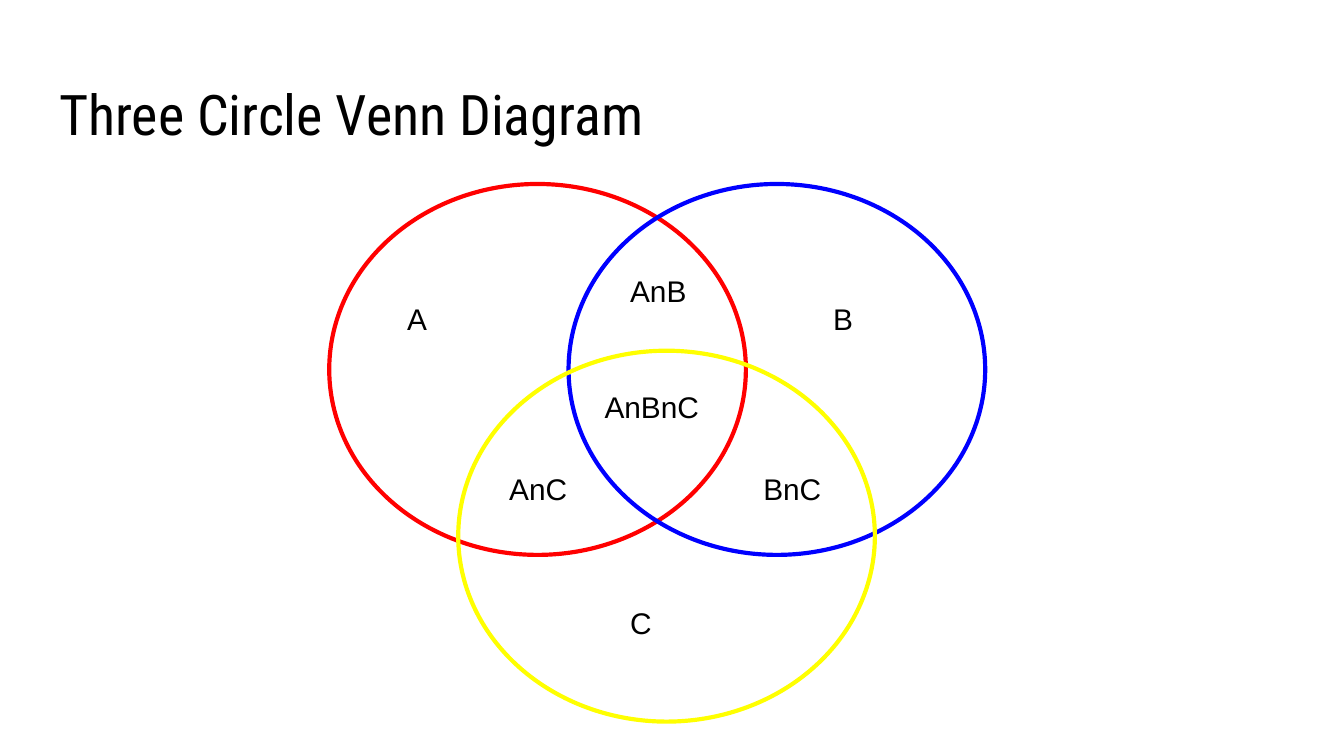
from pptx import Presentation
from pptx.dml.color import RGBColor
from pptx.enum.shapes import MSO_SHAPE
from pptx.enum.text import MSO_ANCHOR, MSO_AUTO_SIZE, PP_ALIGN
from pptx.util import Pt

COLORS = {"text": "000000", "A": "FF0000", "B": "0000FF", "C": "FFFF00"}
CIRCLE_WIDTH, CIRCLE_HEIGHT = 223.2, 198.7
SINGLE_WIDTH, OVERLAP_WIDTH, LABEL_HEIGHT = 43.2, 71.3, 35.3


class VennSlide:
    """Draws the title, circles and labels of a Venn diagram slide."""

    def __init__(self, slide):
        self.slide = slide

    def set_words(self, frame, words, font, size):
        frame.text = words
        frame.word_wrap = True
        frame.auto_size = MSO_AUTO_SIZE.NONE
        frame.vertical_anchor = MSO_ANCHOR.TOP
        frame.margin_left = frame.margin_right = Pt(7.2)
        frame.margin_top = frame.margin_bottom = Pt(7.2)
        line = frame.paragraphs[0]
        line.alignment = PP_ALIGN.LEFT
        style = line.runs[0].font
        style.name, style.size = font, Pt(size)
        style.color.rgb = RGBColor.from_string(COLORS["text"])

    def title(self, words, left, top, width, height):
        heading = self.slide.shapes.title
        heading.left, heading.top = Pt(left), Pt(top)
        heading.width, heading.height = Pt(width), Pt(height)
        self.set_words(heading.text_frame, words, "Roboto Condensed", 30)

    def circles(self, corners):
        diagram = self.slide.shapes.add_group_shape()
        for name, (left, top) in corners.items():
            circle = diagram.shapes.add_shape(
                MSO_SHAPE.OVAL, Pt(left), Pt(top), Pt(CIRCLE_WIDTH), Pt(CIRCLE_HEIGHT))
            circle.shadow.inherit = False
            circle.fill.background()
            circle.line.width = Pt(2.25)
            circle.line.color.rgb = RGBColor.from_string(COLORS[name])

    def label(self, words, left, top):
        width = SINGLE_WIDTH if len(words) == 1 else OVERLAP_WIDTH
        region = self.slide.shapes.add_textbox(
            Pt(left), Pt(top), Pt(width), Pt(LABEL_HEIGHT))
        self.set_words(region.text_frame, words, "Arial", 16)


def main():
    deck = Presentation()
    deck.slide_width, deck.slide_height = Pt(720), Pt(405)
    venn = VennSlide(deck.slides.add_slide(deck.slide_layouts[5]))
    venn.title("Three Circle Venn Diagram", 24.5, 35.3, 671, 45.4)
    venn.circles({"A": (176.4, 98.6), "B": (304.6, 98.6), "C": (245.5, 187.9)})
    for words, left, top in (
        ("A", 211, 154.1),
        ("B", 439.2, 154.1),
        ("C", 330.5, 316.8),
        ("AnBnC", 316.8, 200.9),
        ("AnB", 330.5, 139),
        ("BnC", 401.8, 244.8),
        ("AnC", 265.7, 244.8),
    ):
        venn.label(words, left, top)
    deck.save("out.pptx")


if __name__ == "__main__":
    main()
